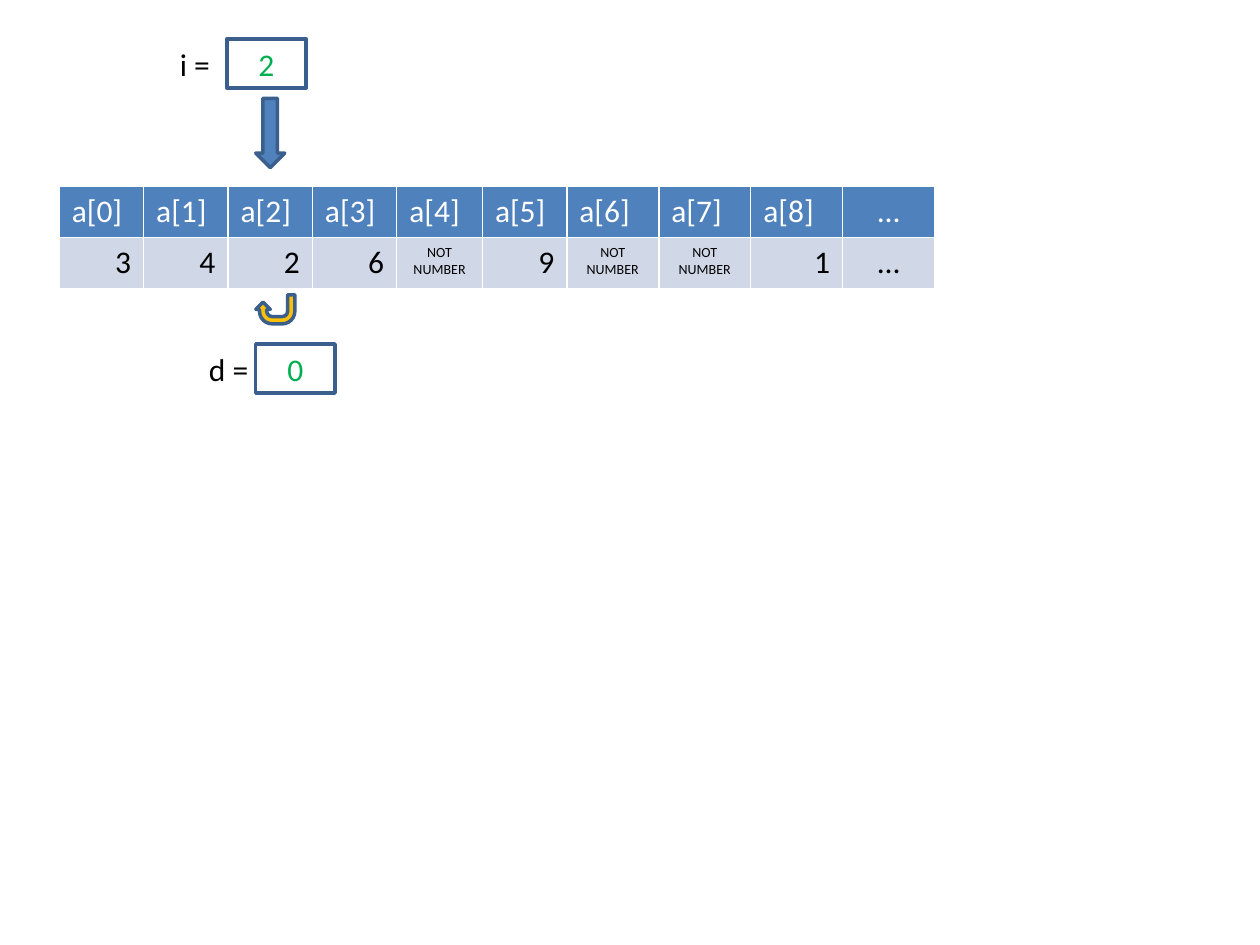
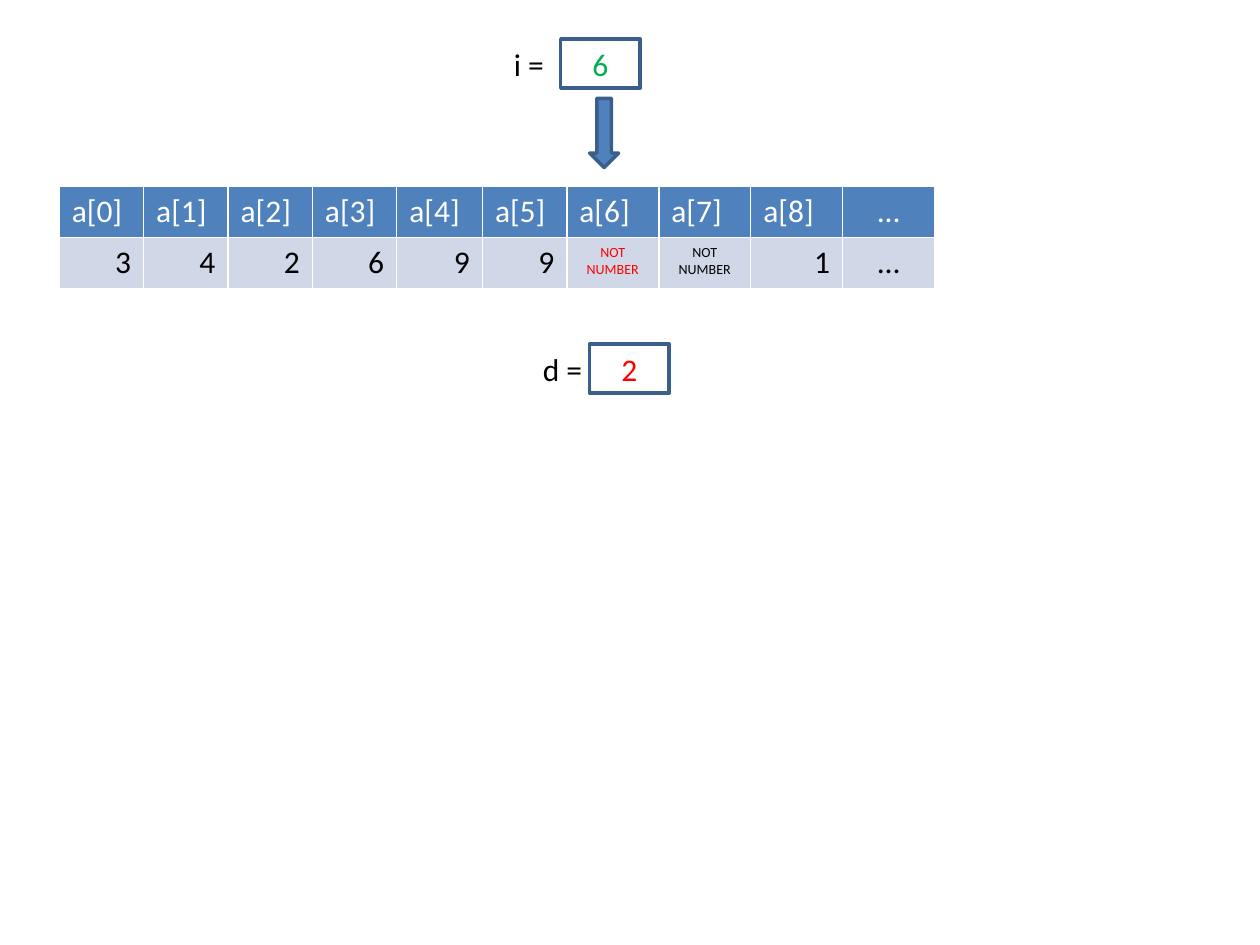
from lxml import etree
from pptx import Presentation
from pptx.dml.color import RGBColor
from pptx.enum.shapes import MSO_SHAPE as SHAPE
from pptx.enum.text import MSO_ANCHOR as ANCHOR, MSO_AUTO_SIZE as AUTO, PP_ALIGN as ALIGN
from pptx.oxml.ns import qn
from pptx.util import Inches, Pt

# Content: x is the left edge of the index box
NAN = "NOT NUMBER"
HEADERS = [f"a[{n}]" for n in range(9)] + ["…"]
STEPS = [
    dict(x=1.8, i="2", d="0", d_color="00B050", wrong=None, uturn=True,
         values=["3", "4", "2", "6", NAN, "9", NAN, NAN, "1", "…"]),
    dict(x=4.45, i="6", d="2", d_color="FF0000", wrong=6, uturn=False,
         values=["3", "4", "2", "6", "9", "9", NAN, NAN, "1", "…"]),
]

# Shared look
FONT = "Calibri"
BLUE, EDGE, BAND, GOLD = "4F81BD", "3A5F8C", "D0D8E8", "FFC000"
WHITE, BLACK, RED, GREEN = "FFFFFF", "000000", "FF0000", "00B050"
COLUMNS = [0.67] * 4 + [0.68, 0.67] + [0.73] * 4
TABLE_X, TABLE_Y, ROW_H = 0.47, 1.48, 0.405
BOX_W, BOX_H, LABEL_H = 0.63, 0.39, 0.4
INDEX_Y, COUNT_Y, COUNT_DX = 0.31, 2.73, 0.23


def rgb(hex_color):
    return RGBColor.from_string(hex_color)


def write(tf, text, color, align=ALIGN.LEFT, size=18):
    p = tf.paragraphs[0]
    p.alignment = align
    r = p.add_run()
    r.text = text
    for name, value in dict(name=FONT, size=Pt(size), bold=False).items():
        setattr(r.font, name, value)
    r.font.color.rgb = rgb(color)


def add_shape(s, kind, x, y, w, h, fill):
    sp = s.shapes.add_shape(kind, *map(Inches, (x, y, w, h)))
    sp.shadow.inherit = False
    sp.fill.solid()
    sp.fill.fore_color.rgb = rgb(fill)
    sp.line.color.rgb = rgb(EDGE)
    sp.line.width = Pt(2)
    return sp


def add_variable(s, label, label_x, label_w, value, color, x, y):
    """A value box with its name on the left."""
    box = add_shape(s, SHAPE.RECTANGLE, x, y, BOX_W, BOX_H, WHITE)
    box.text_frame.vertical_anchor = ANCHOR.MIDDLE
    write(box.text_frame, value, color, ALIGN.CENTER)
    tf = s.shapes.add_textbox(*map(Inches, (label_x, y, label_w, LABEL_H))).text_frame
    tf.word_wrap = False
    tf.auto_size = AUTO.SHAPE_TO_FIT_TEXT
    write(tf, label, BLACK)


def style_cell(cell, fill):
    tc_pr = cell._tc.get_or_add_tcPr()
    for side in ("a:lnL", "a:lnR", "a:lnT", "a:lnB"):
        ln = etree.SubElement(tc_pr, qn(side), w=str(Pt(1)))
        solid = etree.SubElement(ln, qn("a:solidFill"))
        etree.SubElement(solid, qn("a:srgbClr"), val=WHITE)
    cell.fill.solid()
    cell.fill.fore_color.rgb = rgb(fill)


def add_array(s, values, wrong):
    table = s.shapes.add_table(2, len(COLUMNS), *map(Inches, (
        TABLE_X, TABLE_Y, sum(COLUMNS), 2 * ROW_H))).table
    for row in table.rows:
        row.height = Inches(ROW_H)
    for n, (width, header, value) in enumerate(zip(COLUMNS, HEADERS, values)):
        table.columns[n].width = Inches(width)
        head, body = table.cell(0, n), table.cell(1, n)
        style_cell(head, BLUE)
        style_cell(body, BAND)
        write(head.text_frame, header, WHITE,
              ALIGN.CENTER if header == "…" else ALIGN.LEFT)
        write(body.text_frame, value, RED if n == wrong else BLACK,
              ALIGN.RIGHT if value.isdigit() else ALIGN.CENTER,
              8 if value == NAN else 18)


def add_step(prs, step):
    s = prs.slides.add_slide(prs.slide_layouts[6])
    x = step["x"]
    count_x = x + COUNT_DX
    add_array(s, step["values"], step["wrong"])
    # Index and its pointer above the array
    add_shape(s, SHAPE.DOWN_ARROW, count_x, 0.78, 0.23, 0.55, BLUE)
    add_variable(s, "i =", x - 0.47, 0.44, step["i"], GREEN, x, INDEX_Y)
    # Counter below the array
    add_variable(s, "d =", count_x - 0.47, 0.52, step["d"], step["d_color"],
                 count_x, COUNT_Y)
    if step["uturn"]:
        add_shape(s, SHAPE.U_TURN_ARROW, count_x, 2.34, 0.31, 0.23, GOLD).rotation = 180


def main():
    prs = Presentation()
    prs.slide_width, prs.slide_height = Inches(10), Inches(7.5)
    for step in STEPS:
        add_step(prs, step)
    prs.save("out.pptx")


if __name__ == "__main__":
    main()
